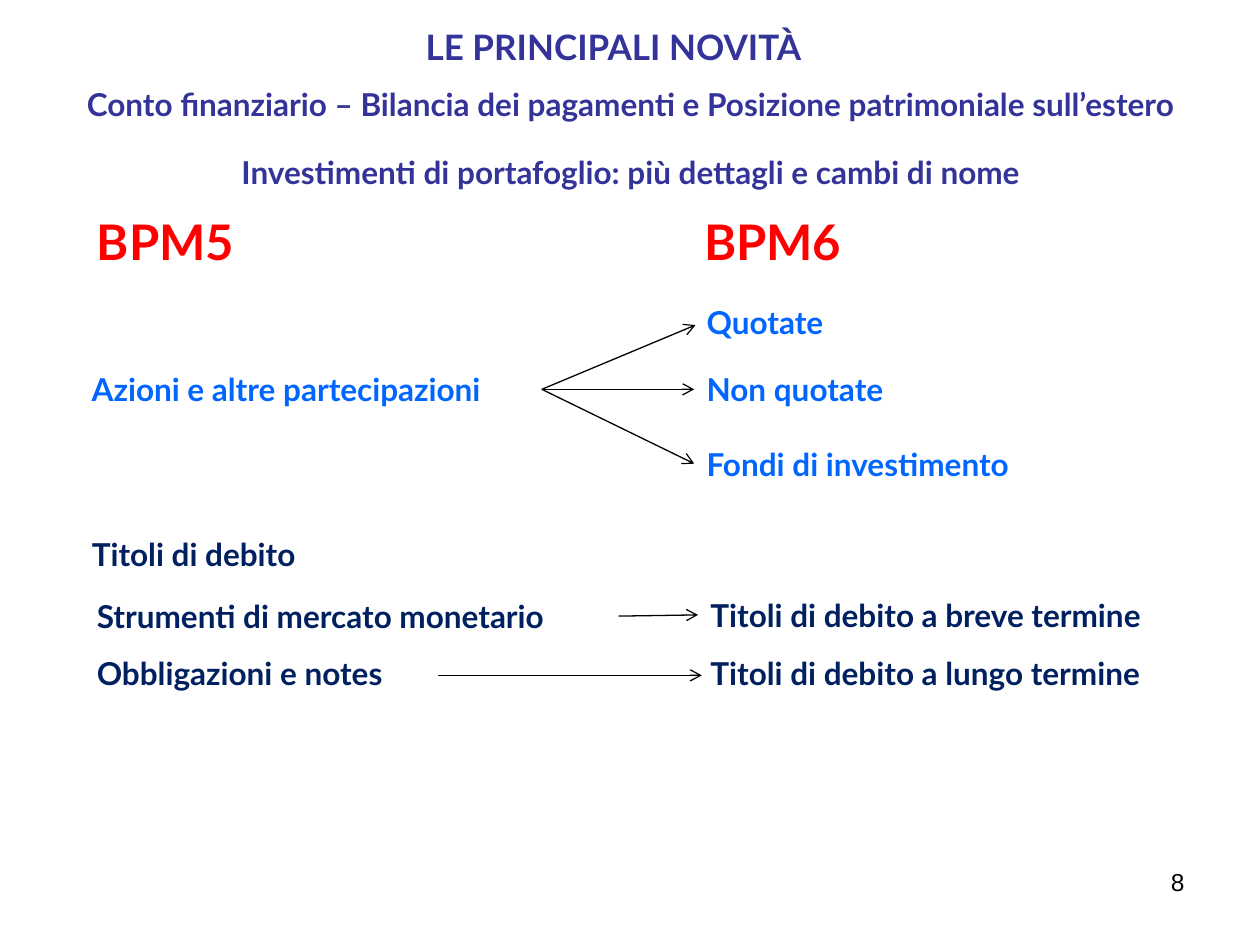
from dataclasses import dataclass
from typing import Optional

from lxml import etree
from pptx import Presentation
from pptx.dml.color import RGBColor
from pptx.enum.shapes import MSO_CONNECTOR
from pptx.enum.text import MSO_ANCHOR, MSO_AUTO_SIZE, PP_ALIGN
from pptx.oxml.ns import qn
from pptx.util import Inches, Pt

STRAIGHT = MSO_CONNECTOR.STRAIGHT
MIDDLE = MSO_ANCHOR.MIDDLE
GROW = MSO_AUTO_SIZE.SHAPE_TO_FIT_TEXT
LEFT, CENTER, RIGHT = PP_ALIGN.LEFT, PP_ALIGN.CENTER, PP_ALIGN.RIGHT
LEFT_SIDE, RIGHT_SIDE = 1, 3


@dataclass(frozen=True)
class Theme:
    font: str = "Lato"
    number_font: str = "Arial"
    title: RGBColor = RGBColor(0x33, 0x33, 0x99)
    heading: RGBColor = RGBColor(0xFF, 0x00, 0x00)
    equity: RGBColor = RGBColor(0x00, 0x66, 0xFF)
    debt: RGBColor = RGBColor(0x00, 0x20, 0x60)
    ink: RGBColor = RGBColor(0x00, 0x00, 0x00)
    heading_size: int = 28
    title_size: int = 20
    body_size: int = 18
    number_size: int = 14
    line_width: float = 0.75


THEME = Theme()


@dataclass(frozen=True)
class Label:
    lines: tuple[str, ...]
    left: float
    top: float
    width: float
    color: RGBColor
    height: float = 0.4
    size: int = THEME.body_size
    font: str = THEME.font
    bold: bool = True
    align: PP_ALIGN = LEFT
    grow: bool = True
    wrap: bool = True
    middle: bool = False
    gap: float = 0


@dataclass(frozen=True)
class Arrow:
    start: tuple[float, float]
    end: tuple[float, float]
    source: Optional[str] = None
    target: Optional[str] = None


EQUITY_HUB = (4.3, 3.09)
EQUITY_LEFT, DEBT_LEFT = 5.51, 5.54

LABELS = [
    Label(("LE PRINCIPALI NOVITÀ",), 3.28, 0.15, 3.55, THEME.title, 0.44,
          THEME.title_size, wrap=False),
    Label(("Conto finanziario – Bilancia dei pagamenti e Posizione patrimoniale sull’estero",
           "Investimenti di portafoglio: più dettagli e cambi di nome"),
          -0.06, 0.64, 10.13, THEME.title, 0.91, align=CENTER, grow=False,
          middle=True, gap=16.8),
    Label(("BPM5",), 0.67, 1.63, 2.81, THEME.heading, 0.57, THEME.heading_size),
    Label(("BPM6",), 5.49, 1.63, 2.66, THEME.heading, 0.57, THEME.heading_size),
    Label(("Azioni e altre partecipazioni",), 0.63, 2.89, 3.87, THEME.equity),
    Label(("Quotate",), EQUITY_LEFT, 2.36, 3.87, THEME.equity),
    Label(("Non quotate",), EQUITY_LEFT, 2.89, 3.87, THEME.equity),
    Label(("Fondi di investimento",), EQUITY_LEFT, 3.48, 3.87, THEME.equity),
    Label(("Titoli di debito",), 0.63, 4.2, 2.59, THEME.debt),
    Label(("Strumenti di mercato monetario",), 0.67, 4.69, 4.24, THEME.debt),
    Label(("Obbligazioni e notes",), 0.67, 5.14, 2.97, THEME.debt),
    Label(("Titoli di debito a breve termine",), DEBT_LEFT, 4.68, 4.23, THEME.debt),
    Label(("Titoli di debito a lungo termine",), DEBT_LEFT, 5.14, 4.23, THEME.debt),
    Label(("8",), 7.17, 6.83, 2.33, THEME.ink, 0.52, THEME.number_size,
          THEME.number_font, bold=False, align=RIGHT, grow=False),
]

ARROWS = [
    Arrow(EQUITY_HUB, (5.52, 2.58)),
    Arrow(EQUITY_HUB, (EQUITY_LEFT, 3.09), target="Non quotate"),
    Arrow(EQUITY_HUB, (EQUITY_LEFT, 3.68), target="Fondi di investimento"),
    Arrow((4.91, 4.89), (DEBT_LEFT, 4.88), "Strumenti di mercato monetario",
          "Titoli di debito a breve termine"),
    Arrow((3.48, 5.36), (5.57, 5.36)),
]


def add_label(page, label: Label):
    box = page.shapes.add_textbox(Inches(label.left), Inches(label.top),
                                  Inches(label.width), Inches(label.height))
    frame = box.text_frame
    frame.word_wrap = label.wrap
    if label.grow:
        frame.auto_size = GROW
    if label.middle:
        frame.vertical_anchor = MIDDLE
    for index, line in enumerate(label.lines):
        para = frame.add_paragraph() if index else frame.paragraphs[0]
        para.text = line
        para.alignment = label.align
        if index:
            para.space_before = Pt(label.gap)
        para.font.name = label.font
        para.font.size = Pt(label.size)
        para.font.bold = label.bold
        para.font.color.rgb = label.color
    return box


def add_arrow(page, arrow: Arrow, boxes: dict) -> None:
    ends = [Inches(value) for value in (*arrow.start, *arrow.end)]
    connector = page.shapes.add_connector(STRAIGHT, *ends)
    if arrow.source:
        connector.begin_connect(boxes[arrow.source], RIGHT_SIDE)
    if arrow.target:
        connector.end_connect(boxes[arrow.target], LEFT_SIDE)
    connector.line.color.rgb = THEME.ink
    connector.line.width = Pt(THEME.line_width)
    properties = connector.line._get_or_add_ln()
    etree.SubElement(properties, qn("a:tailEnd"), type="arrow")
    etree.SubElement(connector._element.spPr, qn("a:effectLst"))


def main() -> None:
    deck = Presentation()
    deck.slide_width, deck.slide_height = Inches(10), Inches(7.5)
    page = deck.slides.add_slide(deck.slide_layouts[6])
    boxes = {label.lines[0]: add_label(page, label) for label in LABELS}
    for arrow in ARROWS:
        add_arrow(page, arrow, boxes)
    deck.save("out.pptx")


if __name__ == "__main__":
    main()
